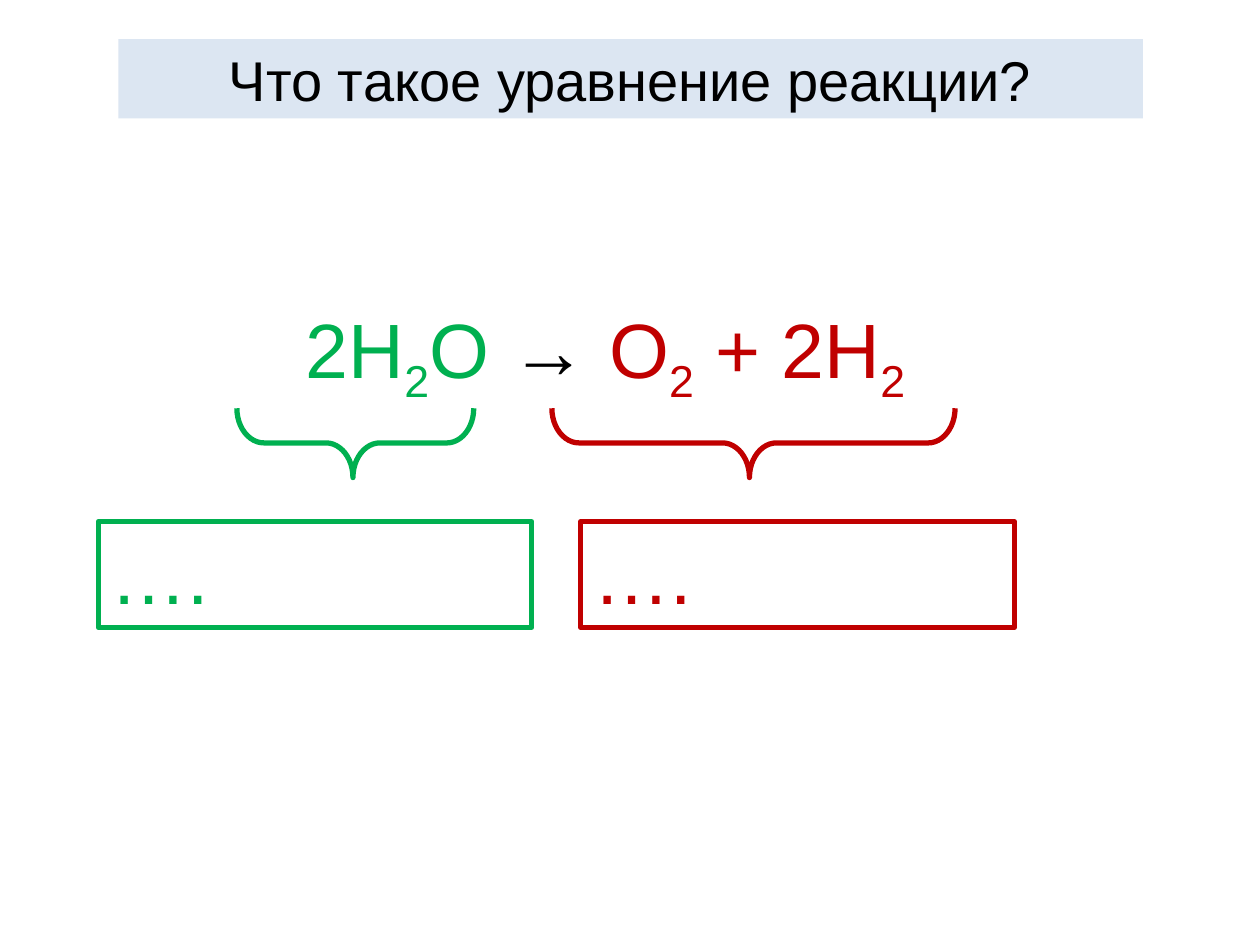
from pptx import Presentation
from pptx.dml.color import RGBColor
from pptx.enum.shapes import MSO_SHAPE
from pptx.enum.text import MSO_ANCHOR, MSO_AUTO_SIZE, PP_ALIGN
from pptx.util import Inches, Pt

BRACE = MSO_SHAPE.RIGHT_BRACE
MIDDLE, TOP = MSO_ANCHOR.MIDDLE, MSO_ANCHOR.TOP
FIXED, GROW = MSO_AUTO_SIZE.NONE, MSO_AUTO_SIZE.SHAPE_TO_FIT_TEXT
CENTER, LEFT = PP_ALIGN.CENTER, PP_ALIGN.LEFT
COLORS = {"band": "DCE6F2", "ink": "000000", "green": "00B050", "red": "C00000"}


class Board:
    font = "Arial"
    big = 44
    head = 32
    line = 3

    def __init__(self, deck):
        self.slide = deck.slides.add_slide(deck.slide_layouts[5])

    def color(self, name):
        return RGBColor.from_string(COLORS[name])

    def place(self, shape, box):
        for key, value in zip(("left", "top", "width", "height"), box):
            setattr(shape, key, Inches(value))

    def stroke(self, shape, color):
        shape.line.color.rgb = self.color(color)
        shape.line.width = Pt(self.line)

    def fill_text(self, shape, runs, size, align, form):
        frame = shape.text_frame
        for key, value in form.items():
            setattr(frame, key, value)
        para = frame.paragraphs[0]
        para.alignment = align
        for text, color, base in runs:
            run = para.add_run()
            run.text = text
            for key, value in {"name": self.font, "size": Pt(size)}.items():
                setattr(run.font, key, value)
            run.font.color.rgb = self.color(color)
            if base:
                run._r.get_or_add_rPr().set("baseline", str(base * 1000))

    def title(self, text, box):
        shape = self.slide.shapes.title
        self.place(shape, box)
        shape.fill.solid()
        shape.fill.fore_color.rgb = self.color("band")
        form = {"auto_size": FIXED, "word_wrap": True, "vertical_anchor": MIDDLE}
        self.fill_text(shape, [(text, "ink", 0)], self.head, CENTER, form)

    def text(self, runs, box, wrap=True):
        shape = self.slide.shapes.add_textbox(*map(Inches, box))
        form = {"auto_size": GROW, "word_wrap": wrap, "vertical_anchor": TOP}
        self.fill_text(shape, runs, self.big, LEFT, form)
        return shape

    def brace(self, color, left, top, span, depth):
        x = left + (span - depth) / 2
        y = top + (depth - span) / 2
        shape = self.slide.shapes.add_shape(BRACE, *map(Inches, (x, y, depth, span)))
        shape.rotation = 90
        shape.adjustments[0] = 0.39
        shape.adjustments[1] = 0.51
        shape.fill.background()
        shape.shadow.inherit = False
        self.stroke(shape, color)

    def answer(self, color, box):
        self.stroke(self.text([("….", color, 0)], box), color)


def main():
    deck = Presentation()
    deck.slide_width, deck.slide_height = Inches(10), Inches(7.5)
    board = Board(deck)
    board.title("Что такое уравнение реакции?", (0.94, 0.31, 8.13, 0.63))
    board.text([
        ("2H", "green", 0), ("2", "green", -25), ("O", "green", 0),
        (" → ", "ink", 0),
        ("O", "red", 0), ("2", "red", -25), (" + 2H", "red", 0), ("2", "red", -25),
    ], (2.33, 2.34, 5.09, 0.84), wrap=False)
    sides = [("green", 1.88, 1.88, 0.78), ("red", 4.38, 3.2, 4.61)]
    for color, left, span, edge in sides:
        board.brace(color, left, 3.24, span, 0.55)
        board.answer(color, (edge, 4.14, 3.44, 0.84))
    deck.save("out.pptx")


if __name__ == "__main__":
    main()
